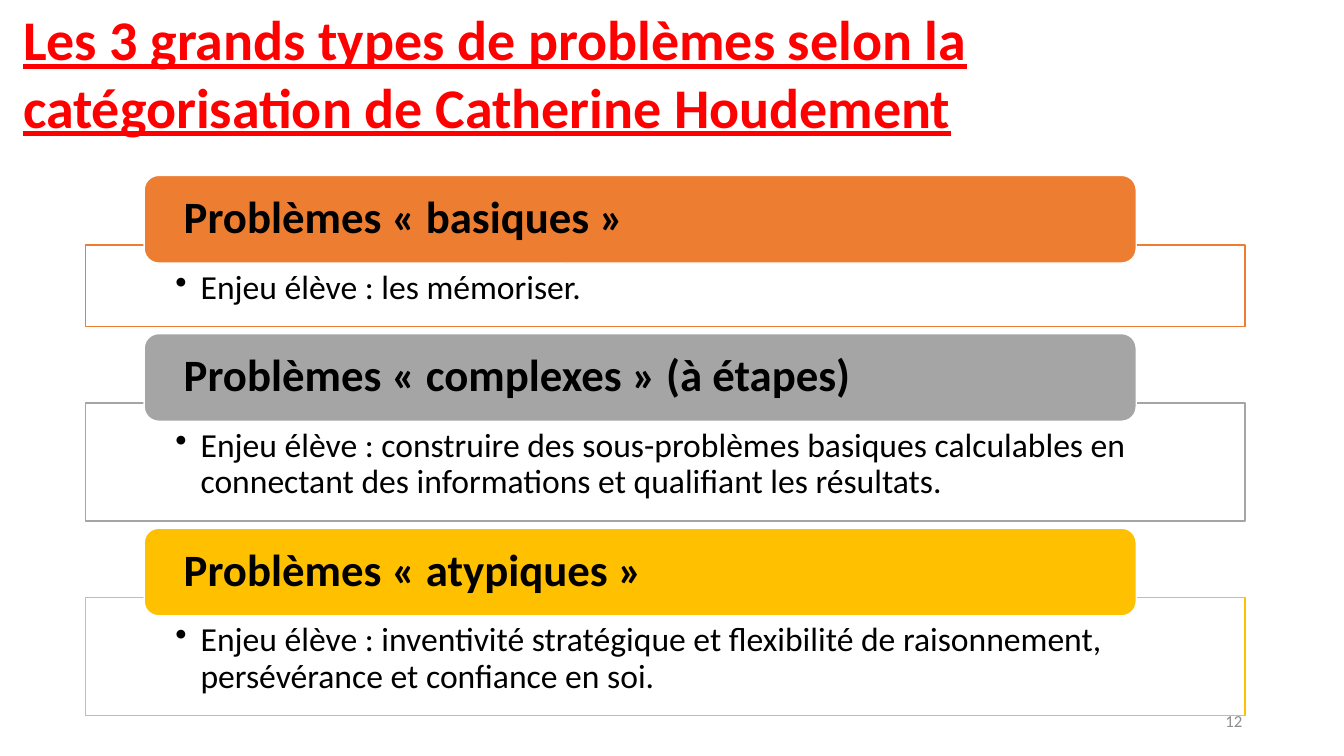
"""Build the slide on the three main types of problems."""
from lxml import etree
from pptx import Presentation
from pptx.dml.color import RGBColor
from pptx.enum.shapes import MSO_SHAPE as SHAPE
from pptx.enum.text import MSO_ANCHOR as ANCHOR, PP_ALIGN as ALIGN
from pptx.oxml.ns import qn
from pptx.util import Inches, Pt

TITLE = "Les 3 grands types de problèmes selon la catégorisation de Catherine Houdement"
PAGE = "12"
PROBLEMS = [
    ("Problèmes « basiques »", "Enjeu élève : les mémoriser.", "ED7D31", 0.81),
    ("Problèmes « complexes » (à étapes)",
     "Enjeu élève : construire des sous-problèmes basiques calculables en "
     "connectant des informations et qualifiant les résultats.", "A5A5A5", 1.17),
    ("Problèmes « atypiques »",
     "Enjeu élève : inventivité stratégique et flexibilité de raisonnement, "
     "persévérance et confiance en soi.", "FFC000", 1.17),
]
FIRST_TOP, HEADER_H, BOX_DROP, GAP = 1.74, 0.87, 0.69, 0.07


def rgb(code):
    return RGBColor.from_string(code)


def add_block(slide, kind, at, fill, line):
    sp = slide.shapes.add_shape(kind, *map(Inches, at))
    sp.shadow.inherit = False
    sp.fill.solid()
    sp.fill.fore_color.rgb = rgb(fill)
    sp.line.color.rgb = rgb(line)
    sp.line.width = Pt(1)
    return sp


def write(sp, text, size, color, insets=(0.1, 0.05, 0.1, 0.05),
          anchor=ANCHOR.TOP, align=ALIGN.LEFT, bold=False, spacing=1.0):
    tf = sp.text_frame
    tf.word_wrap = True
    tf.vertical_anchor = anchor
    tf.margin_left, tf.margin_top, tf.margin_right, tf.margin_bottom = map(Inches, insets)
    p = tf.paragraphs[0]
    p.text, p.alignment, p.line_spacing = text, align, spacing
    p.font.name, p.font.size, p.font.bold = "Calibri", Pt(size), bold
    p.font.color.rgb = rgb(color)
    return p


def add_bullet(p):
    pPr = p._p.get_or_add_pPr()
    pPr.set("marL", str(Inches(0.25)))
    pPr.set("indent", str(-Inches(0.25)))
    bullet = etree.Element(qn("a:buChar"), char="•")
    pPr.find(qn("a:lnSpc")).addnext(bullet)


def set_opacity(sp, percent):
    color = sp.fill._xPr.find(qn("a:solidFill"))[0]
    etree.SubElement(color, qn("a:alpha"), val=str(percent * 1000))


def main():
    prs = Presentation()
    prs.slide_width, prs.slide_height = Inches(13.33), Inches(7.5)
    slide = prs.slides.add_slide(prs.slide_layouts[6])

    top = FIRST_TOP
    for heading, goal, color, box_h in PROBLEMS:
        box_top = top + BOX_DROP
        box = add_block(slide, SHAPE.RECTANGLE, (0.85, box_top, 11.5, box_h), "FFFFFF", color)
        set_opacity(box, 90)
        add_bullet(write(box, goal, 24, "000000", (0.89, 0.25, 0.89, 0.19), spacing=0.9))
        header = add_block(slide, SHAPE.ROUNDED_RECTANGLE, (1.43, top, 9.84, HEADER_H),
                           color, "FFFFFF")
        write(header, heading, 32, "000000", (0.35, 0.04, 0.35, 0.04),
              ANCHOR.MIDDLE, bold=True, spacing=0.9)
        top = box_top + box_h + GAP

    number = slide.shapes.add_textbox(*map(Inches, (9.42, 6.95, 3, 0.4)))
    write(number, PAGE, 12, "8C8C8C", anchor=ANCHOR.MIDDLE, align=ALIGN.RIGHT)
    title = slide.shapes.add_textbox(*map(Inches, (0.13, 0, 12.41, 1.45)))
    write(title, TITLE, 40, "FF0000", bold=True).font.underline = True

    prs.save("out.pptx")


if __name__ == "__main__":
    main()
